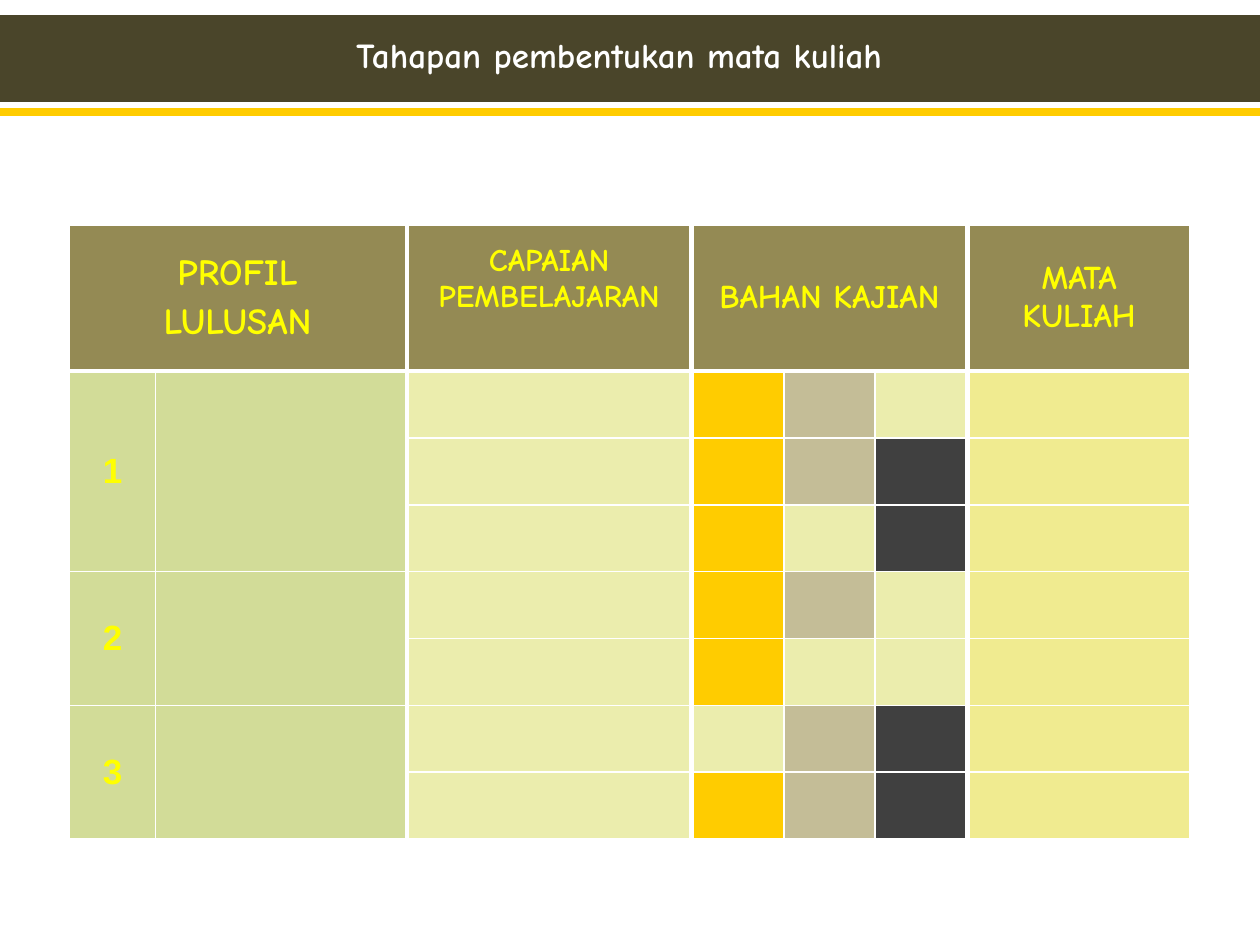
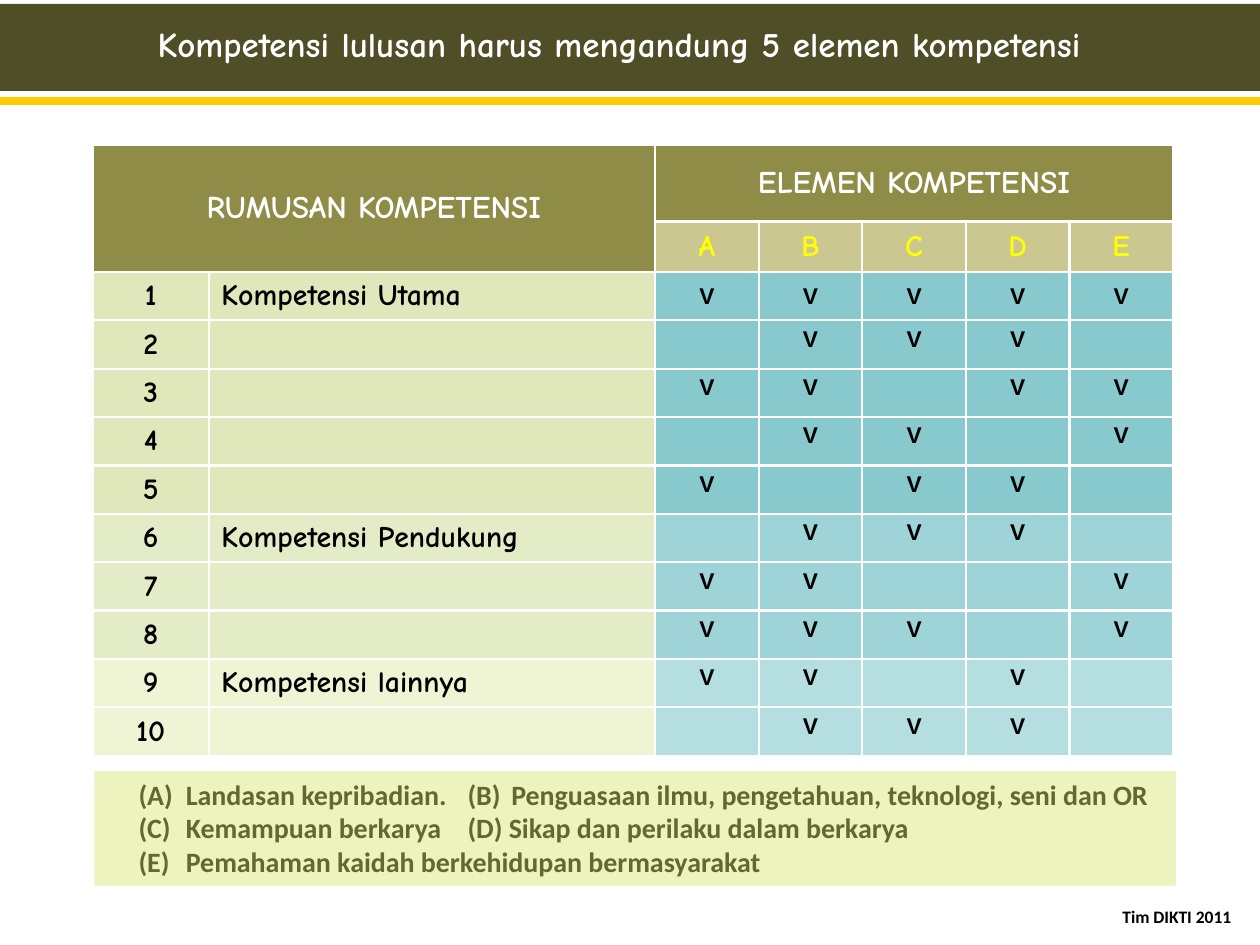
from dataclasses import dataclass

from lxml.etree import SubElement
from pptx import Presentation
from pptx.dml.color import RGBColor
from pptx.enum.shapes import MSO_CONNECTOR, MSO_SHAPE
from pptx.enum.text import MSO_ANCHOR, PP_ALIGN
from pptx.oxml import parse_xml
from pptx.oxml.ns import nsdecls, qn
from pptx.util import Pt


@dataclass(frozen=True)
class Theme:
    """Colours, fonts and type sizes of the presentation."""

    white: str = "FFFFFF"
    black: str = "000000"
    yellow: str = "FFFF00"
    gold: str = "FFCC00"
    tan: str = "C4BD97"
    charcoal: str = "404040"
    stage_band: str = "4A452A"
    competency_band: str = "4F4E27"
    stage_header: str = "948A54"
    profile: str = "D2DC98"
    outcome: str = "EBEDAD"
    course: str = "F0EB90"
    competency_header: str = "8E8C46"
    element_header: str = "CBC791"
    legend_fill: str = "ECF3BF"
    legend_text: str = "666633"
    display: str = "Comic Neue"
    body: str = "Calibri"
    plain: str = "Arial"
    title_size: int = 20
    profile_size: int = 21
    stage_size: int = 19
    header_size: int = 18
    row_size: int = 17
    legend_size: int = 16
    mark_size: int = 13
    footer_size: int = 10


THEME = Theme()
SLIDE_WIDTH, SLIDE_HEIGHT = 720, 540
STAGE_TOP, STAGE_HEADER_HEIGHT, STAGE_ROW_HEIGHT = 128.6, 83.5, 38.2
OUTCOMES_PER_PROFILE = (3, 2, 2)
TOPIC_COLOURS = (THEME.gold, THEME.tan, THEME.charcoal)
TOPIC_ROWS = ("110", "111", "101", "110", "100", "011", "111")
ELEMENTS = "ABCDE"
COMPETENCY_GROUPS = (
    ("Kompetensi Utama", "DFE7BB", "88C9CE", ("ABCDE", "BCD", "ABDE", "BCE", "ACD")),
    ("Kompetensi Pendukung", "E4EBC7", "9ED3D7", ("BCD", "ABE", "ABCE")),
    ("Kompetensi lainnya", "EFF4D4", "B5DEE1", ("ABD", "BCD")),
)
LEGEND = (
    "(A)\tLandasan kepribadian.\t(B)\tPenguasaan ilmu, pengetahuan, teknologi, seni dan OR",
    "(C)\tKemampuan berkarya\t(D) Sikap dan perilaku dalam berkarya",
    "(E)\tPemahaman kaidah berkehidupan bermasyarakat",
)
LEGEND_TABS = (27, 188, 213)


def write_text(frame, text, size=THEME.header_size, font=THEME.display,
               color=THEME.white, align=PP_ALIGN.CENTER, gap=0, tabs=()):
    """Write bold text with one paragraph per line of the text."""
    frame.word_wrap = True
    for index, line in enumerate(text.split("\n")):
        paragraph = frame.add_paragraph() if index else frame.paragraphs[0]
        paragraph.alignment = align
        paragraph.space_before = Pt(gap if index else 0)
        run = paragraph.add_run()
        run.text = line
        run.font.name = font
        run.font.size = Pt(size)
        run.font.bold = True
        run.font.color.rgb = RGBColor.from_string(color)
        if tabs:
            tab_list = SubElement(paragraph._p.get_or_add_pPr(), qn("a:tabLst"))
            for stop in tabs:
                SubElement(tab_list, qn("a:tab"), pos=str(Pt(stop)), algn="l")


def add_box(slide, box, fill):
    """Add a plain filled rectangle."""
    shape = slide.shapes.add_shape(MSO_SHAPE.RECTANGLE, *map(Pt, box))
    shape.shadow.inherit = False
    shape.fill.solid()
    shape.fill.fore_color.rgb = RGBColor.from_string(fill)
    shape.line.fill.background()
    return shape


def add_label(slide, box, text, **text_format):
    """Add a text box."""
    label = slide.shapes.add_textbox(*map(Pt, box))
    write_text(label.text_frame, text, **text_format)


def add_title_band(slide, top, title, fill):
    """Add the title band with the gold rule below it."""
    add_box(slide, (0, top, SLIDE_WIDTH, 49.7), fill)
    rule_y = Pt(top + 55.4)
    rule = slide.shapes.add_connector(
        MSO_CONNECTOR.STRAIGHT, 0, rule_y, Pt(SLIDE_WIDTH), rule_y)
    rule.line.color.rgb = RGBColor.from_string(THEME.gold)
    rule.line.width = Pt(4.5)
    SubElement(rule._element.spPr, qn("a:effectLst"))
    add_label(slide, (48, top + 7, 612, 31.7), title, size=THEME.title_size)


def set_borders(cell, width, bottom):
    """Give a cell white borders."""
    properties = cell._tc.get_or_add_tcPr()
    widths = {"lnL": width, "lnR": width, "lnT": width, "lnB": bottom}
    for index, (edge, points) in enumerate(widths.items()):
        properties.insert(index, parse_xml(
            f'<a:{edge} {nsdecls("a")} w="{Pt(points)}"><a:solidFill>'
            f'<a:srgbClr val="{THEME.white}"/></a:solidFill></a:{edge}>'))


def add_grid(slide, left, top, columns, rows, fills, border=1, header_border=2.25):
    """Add a table whose cells take their fills from rows of colours."""
    frame = slide.shapes.add_table(
        len(rows), len(columns), Pt(left), Pt(top), Pt(sum(columns)), Pt(sum(rows)))
    table = frame.table
    table.first_row = table.horz_banding = False
    for column, width in zip(table.columns, columns):
        column.width = Pt(width)
    for row_index, (row, height) in enumerate(zip(table.rows, rows)):
        row.height = Pt(height)
        for cell, fill in zip(row.cells, fills[row_index]):
            cell.fill.solid()
            cell.fill.fore_color.rgb = RGBColor.from_string(fill)
            cell.margin_top = cell.margin_bottom = 0
            set_borders(cell, border, border if row_index else header_border)
    return table


def fill_cell(cell, text, anchor=MSO_ANCHOR.MIDDLE, bottom_margin=3.6, **text_format):
    """Write text in a table cell."""
    cell.margin_top, cell.margin_bottom = Pt(3.6), Pt(bottom_margin)
    cell.vertical_anchor = anchor
    write_text(cell.text_frame, text, **text_format)


def add_stage(slide, left, columns, heading, fills, spans=(1,) * 7,
              bottom_margin=3.6, size=THEME.stage_size, gap=0):
    """Add one stage table with a heading across its columns."""
    rows = [STAGE_HEADER_HEIGHT] + [span * STAGE_ROW_HEIGHT for span in spans]
    header = [THEME.stage_header] * len(columns)
    table = add_grid(slide, left, STAGE_TOP, columns, rows, [header, *fills])
    if len(columns) > 1:
        table.cell(0, 0).merge(table.cell(0, len(columns) - 1))
    fill_cell(table.cell(0, 0), heading, bottom_margin=bottom_margin,
              size=size, color=THEME.yellow, gap=gap)
    return table


def build_stages_slide(slide):
    """Build the slide on the stages of forming a course."""
    row_count = len(TOPIC_ROWS)
    add_title_band(slide, 8.6, "Tahapan pembentukan mata kuliah", THEME.stage_band)
    profiles = add_stage(slide, 39.8, (49, 143), "PROFIL\nLULUSAN",
                         [[THEME.profile] * 2] * 3, spans=OUTCOMES_PER_PROFILE,
                         size=THEME.profile_size, gap=4.2)
    for number in range(1, 4):
        fill_cell(profiles.cell(number, 0), str(number), size=THEME.title_size,
                  font=THEME.plain, color=THEME.yellow)
    add_stage(slide, 233.2, (161.2,), "CAPAIAN PEMBELAJARAN",
              [[THEME.outcome]] * row_count, bottom_margin=25, size=THEME.header_size)
    topic_fills = [[color if flag == "1" else THEME.outcome
                    for flag, color in zip(flags, TOPIC_COLOURS)]
                   for flags in ("110", "111", "101", "110", "100", "011", "111")]
    topic_fills = [[color if flag == "1" else THEME.outcome
                    for flag, color in zip(flags, TOPIC_COLOURS)]
                   for flags in TOPIC_ROWS]
    add_stage(slide, 396, (52,) * 3, "BAHAN KAJIAN", topic_fills)
    add_stage(slide, 553.6, (126,), "MATA KULIAH", [[THEME.course]] * row_count)


def add_competency_table(slide, left, top):
    """Add the table that marks the elements of each competency."""
    element_count = len(ELEMENTS)
    competencies = [(name if index == 0 else "", name_fill, mark_fill, marks)
                    for name, name_fill, mark_fill, group in COMPETENCY_GROUPS
                    for index, marks in enumerate(group)]
    fills = [[THEME.competency_header] * (2 + element_count),
             [THEME.competency_header] * 2 + [THEME.element_header] * element_count]
    fills += [[name_fill] * 2 + [mark_fill] * element_count
              for _, name_fill, mark_fill, _ in competencies]
    columns = (66.5, 255) + (59.2,) * element_count
    rows = (43.6,) + (27.2,) * (1 + len(competencies))
    table = add_grid(slide, left, top, columns, rows, fills,
                     border=1.5, header_border=1.5)
    table.cell(0, 0).merge(table.cell(1, 1))
    table.cell(0, 2).merge(table.cell(0, 1 + element_count))
    fill_cell(table.cell(0, 0), "RUMUSAN KOMPETENSI")
    fill_cell(table.cell(0, 2), "ELEMEN KOMPETENSI")
    for column, element in enumerate(ELEMENTS, start=2):
        fill_cell(table.cell(1, column), element, size=THEME.row_size, color=THEME.yellow)
    for number, (name, _, _, marks) in enumerate(competencies, start=1):
        row = number + 1
        fill_cell(table.cell(row, 0), str(number), size=THEME.row_size, color=THEME.black)
        if name:
            fill_cell(table.cell(row, 1), name, size=THEME.row_size,
                      color=THEME.black, align=PP_ALIGN.LEFT)
        anchor = MSO_ANCHOR.MIDDLE if number == 1 else MSO_ANCHOR.TOP
        for mark in marks:
            fill_cell(table.cell(row, 2 + ELEMENTS.index(mark)), "V", anchor=anchor,
                      size=THEME.mark_size, font=THEME.plain, color=THEME.black)


def add_legend(slide, box):
    """Add the key to the five elements."""
    legend = add_box(slide, box, THEME.legend_fill)
    frame = legend.text_frame
    frame.margin_left = Pt(25.2)
    frame.vertical_anchor = MSO_ANCHOR.TOP
    write_text(frame, "\n".join(LEGEND), size=THEME.legend_size, font=THEME.body,
               color=THEME.legend_text, align=PP_ALIGN.LEFT, tabs=LEGEND_TABS)


def build_competency_slide(slide):
    """Build the slide on the five elements of competency."""
    add_title_band(slide, 2.2, "Kompetensi lulusan harus mengandung 5 elemen kompetensi",
                   THEME.competency_band)
    add_competency_table(slide, 52.9, 83)
    add_legend(slide, (54, 440.6, 618, 65.5))
    add_label(slide, (572.4, 514, 138.2, 19.4), "Tim DIKTI 2011", size=THEME.footer_size,
              font=THEME.body, color=THEME.black, align=PP_ALIGN.RIGHT)


def main():
    """Build and save the presentation."""
    presentation = Presentation()
    presentation.slide_width, presentation.slide_height = Pt(SLIDE_WIDTH), Pt(SLIDE_HEIGHT)
    for build in (build_stages_slide, build_competency_slide):
        build(presentation.slides.add_slide(presentation.slide_layouts[6]))
    presentation.save("out.pptx")


if __name__ == "__main__":
    main()
